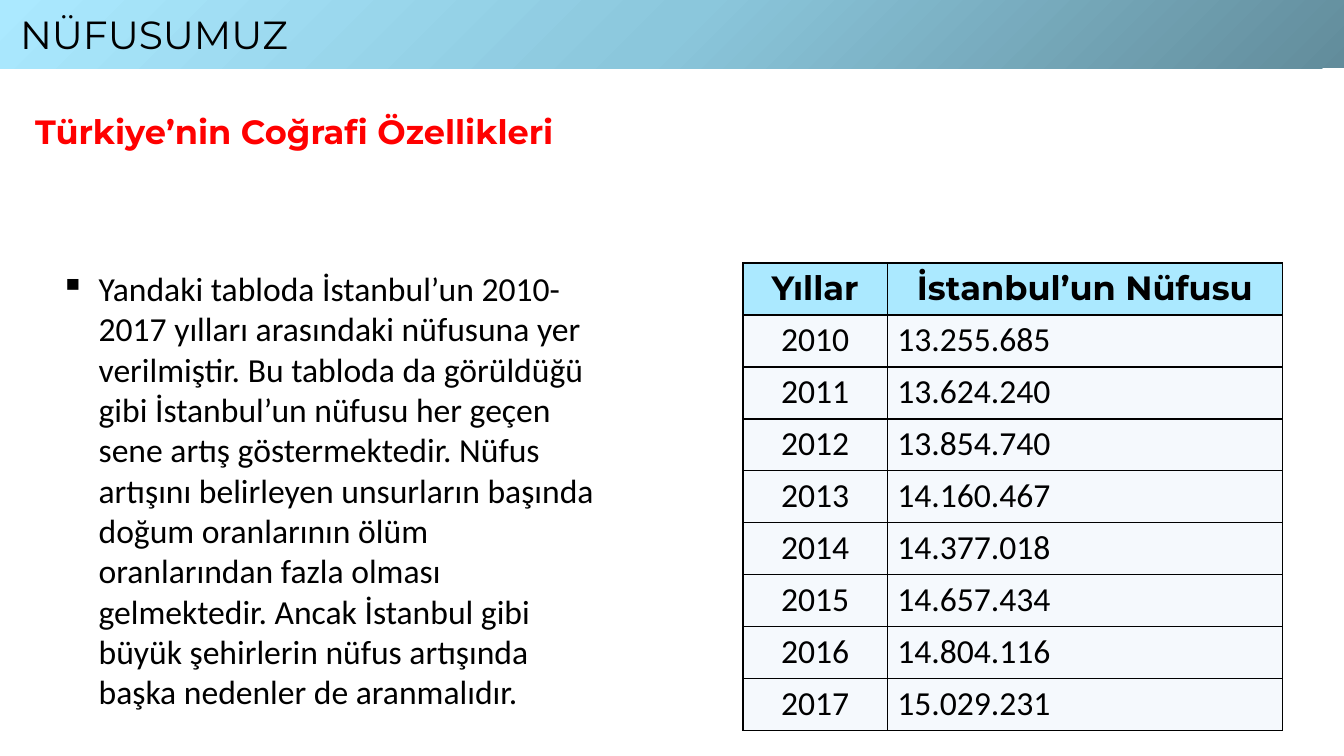
"""Builds a slide on the population of Istanbul with a text and a table."""
from copy import deepcopy

from lxml import etree
from pptx import Presentation
from pptx import util as u
from pptx.dml.color import RGBColor
from pptx.enum import shapes, text
from pptx.oxml import ns

BLACK = RGBColor(0x00, 0x00, 0x00)
RED = RGBColor(0xFF, 0x00, 0x00)
SKY = RGBColor(0xAB, 0xE9, 0xFF)
MID_BLUE = RGBColor(0x8B, 0xC7, 0xDC)
SLATE = RGBColor(0x62, 0x8C, 0x9B)
PALE = RGBColor(0xF5, 0xF9, 0xFD)

HEADING_FONT = "Montserrat"
BODY_FONT = "Calibri"
COLUMN_WIDTHS = (1.43, 3.92)
ROW_HEIGHT = 4.64 / 9
TABLE_ROWS = (
    ("Yıllar", "İstanbul’un Nüfusu"),
    ("2010", "13.255.685"),
    ("2011", "13.624.240"),
    ("2012", "13.854.740"),
    ("2013", "14.160.467"),
    ("2014", "14.377.018"),
    ("2015", "14.657.434"),
    ("2016", "14.804.116"),
    ("2017", "15.029.231"),
)
EXPLANATION = (
    "Yandaki tabloda İstanbul’un 2010-2017 yılları arasındaki nüfusuna yer verilmiştir. "
    "Bu tabloda da görüldüğü gibi İstanbul’un nüfusu her geçen sene artış göstermektedir. "
    "Nüfus artışını belirleyen unsurların başında doğum oranlarının ölüm oranlarından fazla "
    "olması gelmektedir. Ancak İstanbul gibi büyük şehirlerin nüfus artışında başka nedenler "
    "de aranmalıdır."
)


def add_span(para, words, font=BODY_FONT, size=24, color=BLACK, bold=False):
    """Add one formatted run to a paragraph."""
    span = para.add_run()
    span.text = words
    span.font.name = font
    span.font.size = u.Pt(size)
    span.font.bold = bold
    span.font.color.rgb = color


def add_banner(page, left, top, width, height):
    """Add the gradient title band."""
    band = page.shapes.add_shape(
        shapes.MSO_SHAPE.RECTANGLE, *map(u.Inches, (left, top, width, height)))
    band.shadow.inherit = False
    band.line.fill.background()
    band.fill.gradient()
    band.fill.gradient_angle = 135
    stop_list = next(band._element.iter(ns.qn("a:gsLst")))
    stop_list.append(deepcopy(stop_list[-1]))
    for stop, position, color in zip(
            band.fill.gradient_stops, (0, 0.5, 1), (SLATE, MID_BLUE, SKY)):
        stop.position = position
        stop.color.rgb = color
    frame = band.text_frame
    frame.margin_left = u.Inches(0.2)
    frame.vertical_anchor = text.MSO_ANCHOR.MIDDLE
    para = frame.paragraphs[0]
    para.alignment = text.PP_ALIGN.LEFT
    add_span(para, "NÜFUSUMUZ", HEADING_FONT, 28)


def add_subtitle(page, left, top, width, height):
    """Add the red topic line."""
    box = page.shapes.add_textbox(*map(u.Inches, (left, top, width, height)))
    box.text_frame.word_wrap = False
    add_span(box.text_frame.paragraphs[0], "Türkiye’nin Coğrafi Özellikleri",
             HEADING_FONT, color=RED, bold=True)


def add_explanation(page, left, top, width, height):
    """Add the bulleted paragraph beside the table."""
    box = page.shapes.add_textbox(*map(u.Inches, (left, top, width, height)))
    box.text_frame.word_wrap = True
    para = box.text_frame.paragraphs[0]
    properties = para._p.get_or_add_pPr()
    properties.set("marL", str(u.Inches(0.38)))
    properties.set("indent", str(u.Inches(-0.38)))
    etree.SubElement(properties, ns.qn("a:buChar")).set("char", "▪")
    add_span(para, EXPLANATION)


def add_borders(cell):
    """Give a table cell thin black borders on all sides."""
    properties = cell._tc.get_or_add_tcPr()
    for index, side in enumerate(("lnL", "lnR", "lnT", "lnB")):
        line = etree.Element(ns.qn("a:" + side), w=str(u.Pt(1)))
        solid = etree.SubElement(line, ns.qn("a:solidFill"))
        etree.SubElement(solid, ns.qn("a:srgbClr")).set("val", str(BLACK))
        properties.insert(index, line)


def add_population_table(page, left, top):
    """Add the table of population by year."""
    table = page.shapes.add_table(
        len(TABLE_ROWS), len(COLUMN_WIDTHS), u.Inches(left), u.Inches(top),
        u.Inches(sum(COLUMN_WIDTHS)), u.Inches(ROW_HEIGHT * len(TABLE_ROWS))).table
    table.first_row = False
    table.horz_banding = False
    for column, width in zip(table.columns, COLUMN_WIDTHS):
        column.width = u.Inches(width)
    for row_index, values in enumerate(TABLE_ROWS):
        is_header = row_index == 0
        for column_index, value in enumerate(values):
            cell = table.cell(row_index, column_index)
            cell.fill.solid()
            cell.fill.fore_color.rgb = SKY if is_header else PALE
            add_borders(cell)
            para = cell.text_frame.paragraphs[0]
            if is_header or column_index == 0:
                para.alignment = text.PP_ALIGN.CENTER
            add_span(para, value, HEADING_FONT if is_header else BODY_FONT, bold=is_header)


def main():
    """Build and save the deck."""
    deck = Presentation()
    deck.slide_width = u.Inches(13.33)
    deck.slide_height = u.Inches(7.5)
    page = deck.slides.add_slide(deck.slide_layouts[6])
    add_banner(page, 0, 0, 13.33, 0.68)
    add_subtitle(page, 0.25, 1.05, 5.65, 0.5)
    add_population_table(page, 7.37, 2.61)
    add_explanation(page, 0.5, 2.61, 5.65, 4.54)
    deck.save("out.pptx")


if __name__ == "__main__":
    main()
